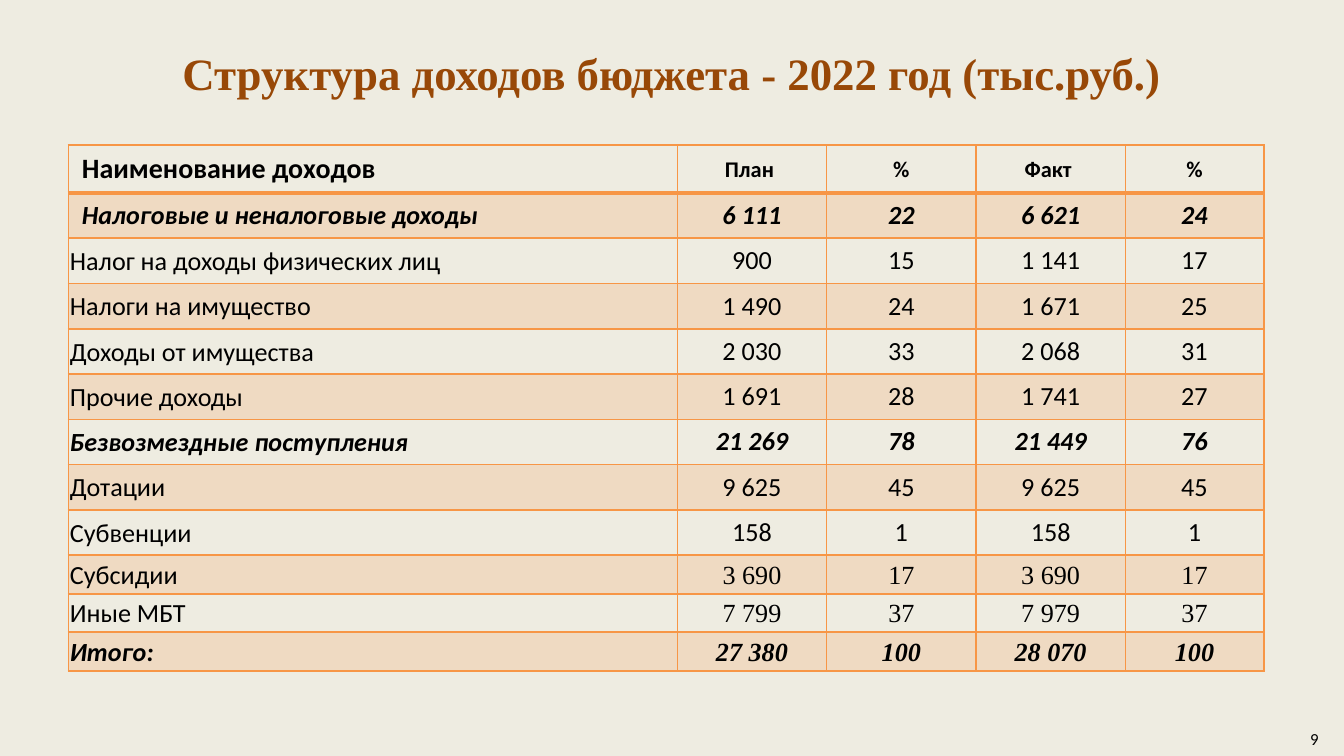
from pptx import Presentation
from pptx.dml.color import RGBColor
from pptx.enum.text import MSO_ANCHOR, PP_ALIGN
from pptx.oxml import parse_xml
from pptx.oxml.ns import nsdecls, qn
from pptx.util import Inches, Pt
from lxml.etree import SubElement

BACKGROUND = RGBColor(0xEE, 0xEC, 0xE1)
BROWN = RGBColor(0x98, 0x48, 0x07)
ORANGE = RGBColor(0xF7, 0x96, 0x46)
BLACK = RGBColor(0, 0, 0)
SANS, SERIF = "Calibri", "Times New Roman"

ROWS = [
    ("Наименование доходов", "План ", "%", "Факт ", "%"),
    ("Налоговые и неналоговые доходы", "6 111", "22", "6 621", "24"),
    ("Налог на доходы физических лиц", "900", "15", "1 141", "17"),
    ("Налоги на имущество", "1 490", "24", "1 671", "25"),
    ("Доходы от имущества", "2 030", "33", "2 068", "31"),
    ("Прочие доходы", "1 691", "28", "1 741", "27"),
    ("Безвозмездные поступления", "21 269", "78", "21 449", "76"),
    ("Дотации", "9 625", "45", "9 625", "45"),
    ("Субвенции", "158", "1", "158", "1"),
    ("Субсидии", "3 690", "17", "3 690", "17"),
    ("Иные МБТ", "7 799", "37", "7 979", "37"),
    ("Итого:", "27 380", "100", "28 070", "100"),
]
TOTALS = (1, 6, 11)
FIRST_SERIF_ROW = 9
COLUMN_WIDTHS = (4.53, 10 / 9, 10 / 9, 10 / 9, 1.03)
TABLE_HEIGHT = Inches(3.44)
ROW_HEIGHT = TABLE_HEIGHT // len(ROWS)


def format_run(run, font, size, color, bold=False, italic=False):
    run.font.name, run.font.size = font, Pt(size)
    run.font.color.rgb = color
    run.font.bold, run.font.italic = bold, italic


def add_border(cell, side, points):
    cell._tc.get_or_add_tcPr().append(parse_xml(
        f'<a:ln{side} {nsdecls("a")} w="{Pt(points)}"><a:solidFill>'
        f'<a:srgbClr val="{ORANGE}"/></a:solidFill></a:ln{side}>'))


prs = Presentation()
prs.slide_width = Inches(10)
prs.slide_height = prs.slide_width * 9 // 16
s = prs.slides.add_slide(prs.slide_layouts[5])
s.background.fill.solid()
s.background.fill.fore_color.rgb = BACKGROUND

# Title
title = s.shapes.title
title.left, title.top = Inches(1.06), Inches(0.29)
title.width, title.height = Inches(7.87), Inches(0.5)
tf = title.text_frame
tf.text = "Структура доходов бюджета - 2022 год (тыс.руб.)"
tf.vertical_anchor = MSO_ANCHOR.TOP
tf.paragraphs[0].alignment = PP_ALIGN.CENTER
format_run(tf.paragraphs[0].runs[0], SERIF, 24, BROWN, bold=True)

# Income table
frame = s.shapes.add_table(len(ROWS), len(COLUMN_WIDTHS), Inches(0.51), Inches(1.08),
                           Inches(sum(COLUMN_WIDTHS)), TABLE_HEIGHT)
table = frame.table
for column, width in zip(table.columns, COLUMN_WIDTHS):
    column.width = Inches(width)

for i, values in enumerate(ROWS):
    table.rows[i].height = ROW_HEIGHT
    for j, value in enumerate(values):
        cell = table.cell(i, j)
        cell.text = value
        p = cell.text_frame.paragraphs[0]
        p.alignment = PP_ALIGN.CENTER if j else PP_ALIGN.LEFT
        size = 14 if i else (12 if j else 15)
        font = SERIF if j and i >= FIRST_SERIF_ROW else SANS
        format_run(p.runs[0], font, size, BLACK,
                   bold=i == 0 or i in TOTALS, italic=i in TOTALS)

        if (i == 0 and j) or (i > 1 and j == 0) or i >= FIRST_SERIF_ROW:
            cell.vertical_anchor = MSO_ANCHOR.MIDDLE
            cell.margin_left = cell.margin_right = cell.margin_top = Inches(0.01)
            cell.margin_bottom = 0

        for side in "LR":
            add_border(cell, side, 1)
        add_border(cell, "T", 2 if i == 1 else 1)
        add_border(cell, "B", 2 if i == 0 else 1)

        if i % 2:
            cell.fill.solid()
            cell.fill.fore_color.rgb = ORANGE
            tint = cell._tc.tcPr.find(qn("a:solidFill")).find(qn("a:srgbClr"))
            SubElement(tint, qn("a:alpha")).set("val", "20000")
        else:
            cell.fill.background()

# Page number
tf = s.shapes.add_textbox(Inches(9.65), Inches(5.37), Inches(0.24), Inches(0.25)).text_frame
tf.text = "9"
format_run(tf.paragraphs[0].runs[0], SANS, 9, BLACK)

prs.save("out.pptx")
